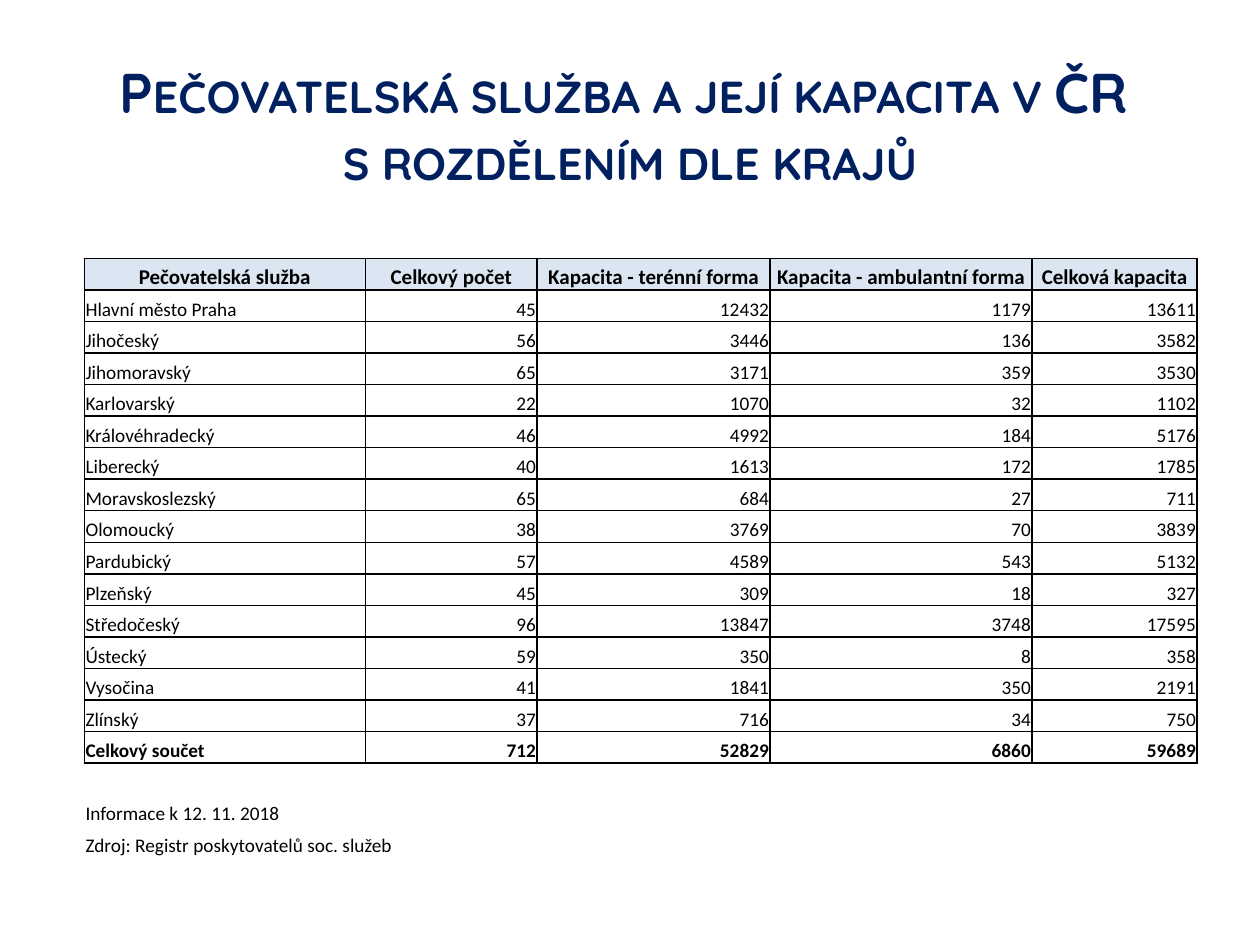
import pptx
import pptx.util
import pptx.dml.color
import pptx.enum.text
import pptx.oxml.ns
from lxml import etree

Pt = pptx.util.Pt
RGB = pptx.dml.color.RGBColor
ALIGN = pptx.enum.text.PP_ALIGN
ANCHOR = pptx.enum.text.MSO_ANCHOR
qn = pptx.oxml.ns.qn

NAVY = RGB(0x00, 0x20, 0x60)
BLACK = RGB(0x00, 0x00, 0x00)
WHITE = RGB(0xFF, 0xFF, 0xFF)
PALE = RGB(0xDC, 0xE6, 0xF2)

TITLE = "Pečovatelská služba a její kapacita v ČR \vs rozdělením dle krajů"
HEAD = ["Pečovatelská služba", "Celkový počet", "Kapacita - terénní forma",
        "Kapacita - ambulantní forma", "Celková kapacita"]
REGIONS = [
    ("Hlavní město Praha", 45, 12432, 1179, 13611),
    ("Jihočeský", 56, 3446, 136, 3582),
    ("Jihomoravský", 65, 3171, 359, 3530),
    ("Karlovarský", 22, 1070, 32, 1102),
    ("Královéhradecký", 46, 4992, 184, 5176),
    ("Liberecký", 40, 1613, 172, 1785),
    ("Moravskoslezský", 65, 684, 27, 711),
    ("Olomoucký", 38, 3769, 70, 3839),
    ("Pardubický", 57, 4589, 543, 5132),
    ("Plzeňský", 45, 309, 18, 327),
    ("Středočeský", 96, 13847, 3748, 17595),
    ("Ústecký", 59, 350, 8, 358),
    ("Vysočina", 41, 1841, 350, 2191),
    ("Zlínský", 37, 716, 34, 750),
]
TOTAL = ("Celkový součet", 712, 52829, 6860, 59689)
NOTES = ["Informace k 12. 11. 2018", "Zdroj: Registr poskytovatelů soc. služeb"]
WIDTHS = [160.6, 98.2, 133.1, 149.7, 94.3]
TOP_ROW, ROW = 36, 18.05
LEFT, TOP = 48.2, 111.6

BLANK = [""] * len(HEAD)
ROWS = [BLANK, HEAD, *REGIONS, TOTAL, BLANK] + [[note] + BLANK[1:] for note in NOTES]
SUM = len(REGIONS) + 2


def style(par, size, name, color, bold, align):
    par.alignment = align
    font = par.font
    font.size, font.name, font.bold = Pt(size), name, bold
    font.color.rgb = color


def edge(cell, side, shown):
    props = cell._tc.get_or_add_tcPr()
    line = etree.SubElement(props, qn("a:ln" + side), w=str(Pt(1)))
    if shown:
        fill = etree.SubElement(line, qn("a:solidFill"))
        etree.SubElement(fill, qn("a:srgbClr"), val=str(BLACK))
    else:
        etree.SubElement(line, qn("a:noFill"))


def fill_cell(cell, row, col, value):
    grid = 1 <= row <= SUM
    shown = {"L": grid, "R": grid, "T": 1 <= row <= SUM + 1, "B": row <= SUM}
    for side in "LRTB":
        edge(cell, side, shown[side])
    cell.fill.solid()
    cell.fill.fore_color.rgb = PALE if row == 1 else WHITE
    cell.margin_left = cell.margin_right = cell.margin_top = Pt(0.7)
    cell.margin_bottom = Pt(0)
    cell.vertical_anchor = ANCHOR.BOTTOM
    par = cell.text_frame.paragraphs[0]
    if value == "":
        etree.SubElement(par._p, qn("a:endParaRPr"), sz="1100")
        return
    par.text = str(value)
    align = ALIGN.CENTER if row == 1 else ALIGN.RIGHT if col else ALIGN.LEFT
    style(par, 12 if row == 1 else 11, "Calibri", BLACK, row in (1, SUM), align)


def add_title(slide):
    box = slide.shapes.add_textbox(Pt(36), Pt(21.6), Pt(648), Pt(90))
    frame = box.text_frame
    frame.word_wrap = True
    frame.vertical_anchor = ANCHOR.MIDDLE
    frame.margin_top, frame.margin_bottom = Pt(9), Pt(0)
    par = frame.paragraphs[0]
    par.text = TITLE
    style(par, 32, "Quicksand", NAVY, True, ALIGN.CENTER)
    par._p.pPr.find(qn("a:defRPr")).set("cap", "small")


def add_grid(slide):
    high = TOP_ROW + ROW * (len(ROWS) - 1)
    table = slide.shapes.add_table(len(ROWS), len(HEAD), Pt(LEFT), Pt(TOP),
                                   Pt(sum(WIDTHS)), Pt(high)).table
    table.first_row = table.horz_banding = False
    for col, width in zip(table.columns, WIDTHS):
        col.width = Pt(width)
    for row, values in enumerate(ROWS):
        table.rows[row].height = Pt(ROW if row else TOP_ROW)
        for col, value in enumerate(values):
            fill_cell(table.cell(row, col), row, col, value)
    last = len(ROWS) - 1
    table.cell(0, 0).merge(table.cell(0, len(HEAD) - 1))
    table.cell(last, 0).merge(table.cell(last, 1))


def main():
    deck = pptx.Presentation()
    deck.slide_width, deck.slide_height = Pt(720), Pt(540)
    slide = deck.slides.add_slide(deck.slide_layouts[6])
    add_title(slide)
    add_grid(slide)
    deck.save("out.pptx")


if __name__ == "__main__":
    main()
